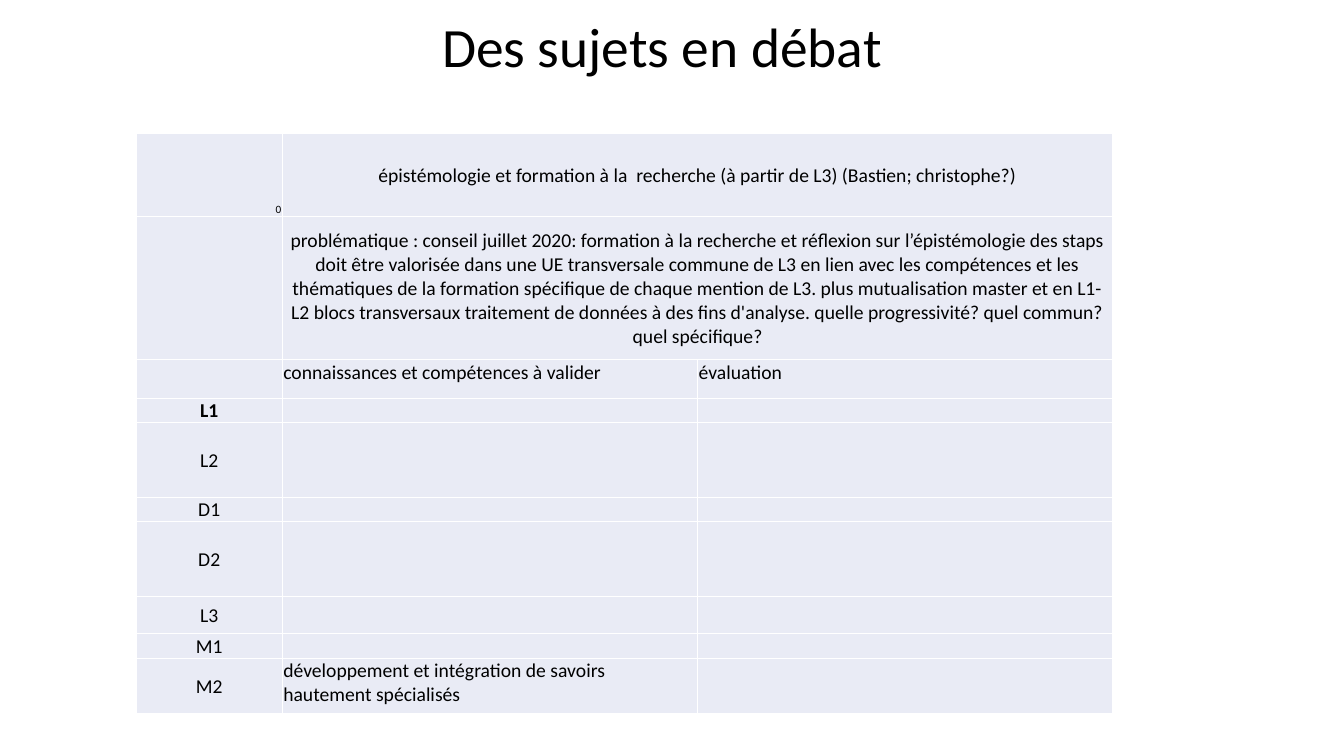
"""Build the slide of debated subjects with its table of course levels."""
import lxml.etree
import pptx
import pptx.dml.color
import pptx.enum.text
import pptx.oxml.ns
import pptx.util

Inches = pptx.util.Inches
Pt = pptx.util.Pt
ALIGN = pptx.enum.text.PP_ALIGN
ANCHOR = pptx.enum.text.MSO_ANCHOR
qn = pptx.oxml.ns.qn

COLORS = {"text": "000000", "cell": "E9EBF5", "border": "FFFFFF"}
FONT = "Calibri"
COLUMN_WIDTHS = [1.45, 4.12, 4.12]
ROW_HEIGHTS = [0.83, 1.42, 0.38, 0.24, 0.74, 0.24, 0.74, 0.37, 0.24, 0.55]
SUBJECT = "épistémologie et formation à la  recherche (à partir de L3) (Bastien; christophe?)"
PROBLEM = (
    "problématique : conseil juillet 2020: formation à la recherche et réflexion sur "
    "l’épistémologie des staps doit être valorisée dans une UE transversale commune de L3 "
    "en lien avec les compétences et les thématiques de la formation spécifique de chaque "
    "mention de L3. plus mutualisation master et en L1-L2 blocs transversaux traitement de "
    "données à des fins d'analyse. quelle progressivité? quel commun? quel spécifique?"
)
HEADINGS = ["connaissances et compétences à valider", "évaluation"]
LEVELS = ["L1", "L2", "D1", "D2", "L3", "M1", "M2"]
SKILLS = "développement et intégration de savoirs hautement spécialisés"


def rgb(name):
    return pptx.dml.color.RGBColor.from_string(COLORS[name])


def write_text(frame, text, size=14, bold=False, align=ALIGN.LEFT, spacing=1.0):
    para = frame.paragraphs[0]
    para.alignment = align
    para.line_spacing = spacing
    span = para.add_run()
    span.text = text
    span.font.name = FONT
    span.font.size = Pt(size)
    span.font.bold = bold
    span.font.color.rgb = rgb("text")


def add_title(page, text):
    box = page.shapes.add_textbox(Inches(0.92), Inches(0.12), Inches(11.29), Inches(0.75))
    box.text_frame.word_wrap = True
    box.text_frame.vertical_anchor = ANCHOR.MIDDLE
    write_text(box.text_frame, text, size=39.6, align=ALIGN.CENTER, spacing=0.9)


def style_cell(cell):
    cell.margin_left = cell.margin_right = cell.margin_top = Inches(0.01)
    cell.margin_bottom = 0
    properties = cell._tc.get_or_add_tcPr()
    for side in ("a:lnL", "a:lnR", "a:lnT", "a:lnB"):
        line = lxml.etree.SubElement(properties, qn(side), w=str(Pt(1)))
        fill = lxml.etree.SubElement(line, qn("a:solidFill"))
        lxml.etree.SubElement(fill, qn("a:srgbClr"), val=COLORS["border"])
    cell.fill.solid()
    cell.fill.fore_color.rgb = rgb("cell")
    para = cell.text_frame.paragraphs[0]
    lxml.etree.SubElement(para._p, qn("a:endParaRPr"), sz="800")


def fill_cell(cell, text, anchor=ANCHOR.MIDDLE, align=ALIGN.CENTER, **text_format):
    cell.vertical_anchor = anchor
    write_text(cell.text_frame, text, align=align, **text_format)


def add_grid(page):
    frame = page.shapes.add_table(
        len(ROW_HEIGHTS), len(COLUMN_WIDTHS), Inches(1.35), Inches(1.32),
        Inches(sum(COLUMN_WIDTHS)), Inches(sum(ROW_HEIGHTS)))
    table = frame.table
    table.first_row = False
    table.horz_banding = False
    for column, width in zip(table.columns, COLUMN_WIDTHS):
        column.width = Inches(width)
    for row, height in zip(table.rows, ROW_HEIGHTS):
        row.height = Inches(height)
    for cell in table.iter_cells():
        style_cell(cell)
    return table


def fill_grid(table):
    fill_cell(table.cell(0, 0), "0", anchor=ANCHOR.BOTTOM, align=ALIGN.RIGHT, size=8)
    for row, text in enumerate([SUBJECT, PROBLEM]):
        table.cell(row, 1).merge(table.cell(row, 2))
        fill_cell(table.cell(row, 1), text)
    for column, text in enumerate(HEADINGS, start=1):
        fill_cell(table.cell(2, column), text, anchor=ANCHOR.TOP, align=ALIGN.LEFT)
    for row, level in enumerate(LEVELS, start=3):
        fill_cell(table.cell(row, 0), level, bold=level == "L1")
    fill_cell(table.cell(9, 1), SKILLS, anchor=ANCHOR.TOP, align=ALIGN.LEFT)


def main():
    deck = pptx.Presentation()
    deck.slide_width = Inches(13.33)
    deck.slide_height = Inches(7.5)
    page = deck.slides.add_slide(deck.slide_layouts[6])
    add_title(page, "Des sujets en débat")
    fill_grid(add_grid(page))
    deck.save("out.pptx")


if __name__ == "__main__":
    main()
